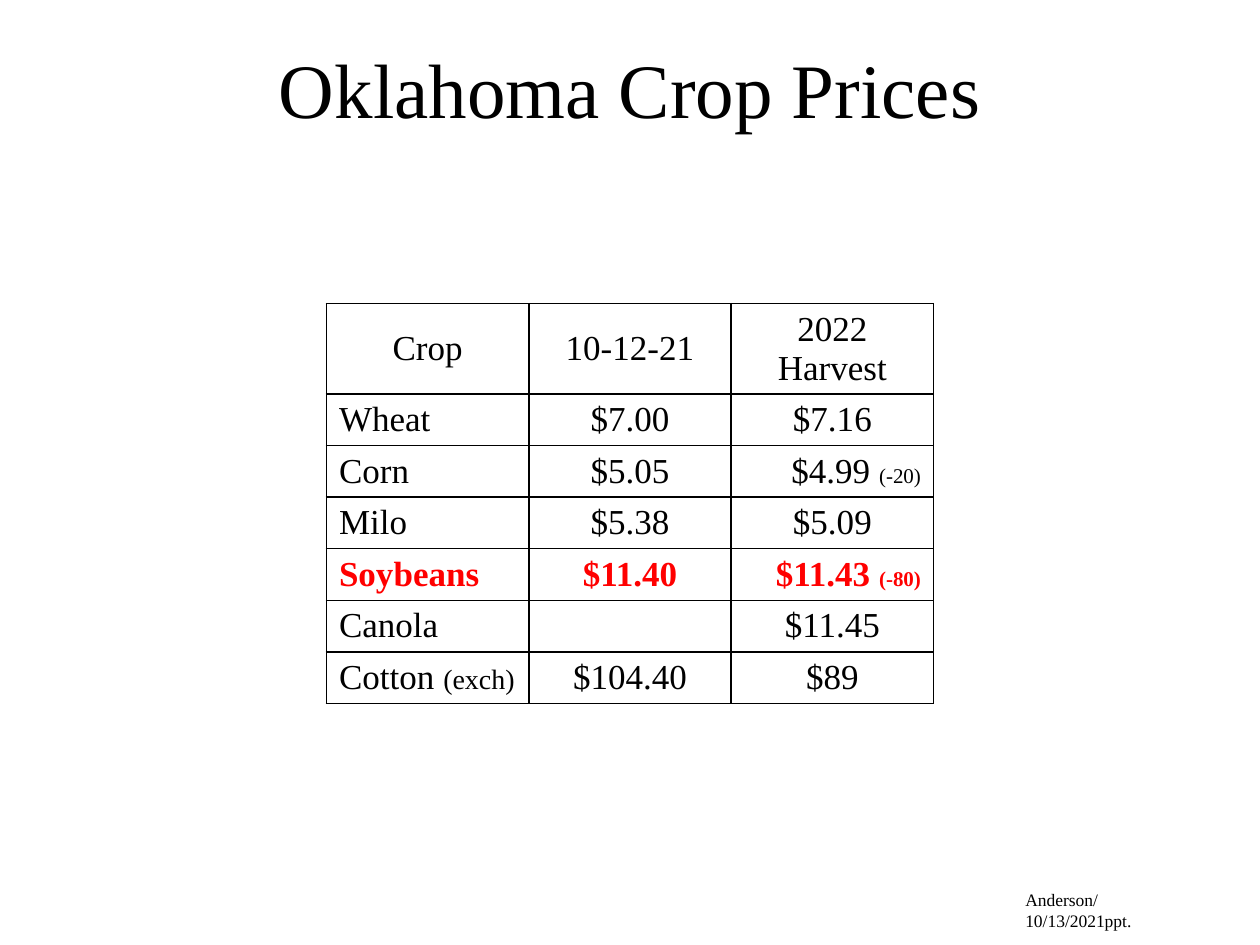
import pptx
import pptx.dml.color
import pptx.enum.text
import pptx.oxml.ns
import pptx.util
from lxml import etree
from pptx.util import Cm

FONT = "Times New Roman"
BLACK = "000000"
RED = "FF0000"
ALIGN = pptx.enum.text.PP_ALIGN
MIDDLE = pptx.enum.text.MSO_ANCHOR.MIDDLE

HEADINGS = ["Crop", "10-12-21", "2022 Harvest"]
PRICES = [
    ["Wheat", "$7.00", "$7.16"],
    ["Corn", "$5.05", ("$4.99 ", "(-20)", 12)],
    ["Milo", "$5.38", "$5.09"],
    ["Soybeans", "$11.40", ("$11.43 ", "(-80)", 12)],
    ["Canola", "", "$11.45"],
    [("Cotton ", "(exch)", 16), "$104.40", "$89"],
]
HIGHLIGHTED_CROP = "Soybeans"


def rgb(color):
    return pptx.dml.color.RGBColor.from_string(color)


def format_run(run, size, color=BLACK, bold=False):
    run.font.name = FONT
    run.font.size = pptx.util.Pt(size)
    run.font.bold = bold
    run.font.color.rgb = rgb(color)


def place(shape, left, top, width, height):
    shape.left, shape.top, shape.width, shape.height = left, top, width, height


def add_title(slide, left, top, width, height):
    title = slide.shapes.title
    place(title, left, top, width, height)
    title.text_frame.text = "Oklahoma Crop Prices"
    title.text_frame.vertical_anchor = MIDDLE
    paragraph = title.text_frame.paragraphs[0]
    paragraph.alignment = ALIGN.CENTER
    format_run(paragraph.runs[0], 44)


def add_credit(slide, left, top, width, height):
    box = slide.shapes.add_textbox(left, top, width, height)
    box.text_frame.word_wrap = True
    box.text_frame.text = "Anderson/10/13/2021ppt."
    format_run(box.text_frame.paragraphs[0].runs[0], 10)


def set_borders(cell, color, width):
    properties = cell._tc.get_or_add_tcPr()
    qn = pptx.oxml.ns.qn
    for position, side in enumerate(("a:lnL", "a:lnR", "a:lnT", "a:lnB")):
        line = etree.Element(qn(side), w=str(pptx.util.Pt(width)))
        fill = etree.SubElement(line, qn("a:solidFill"))
        etree.SubElement(fill, qn("a:srgbClr"), val=color)
        properties.insert(position, line)


def fill_cell(cell, content, alignment, color=BLACK, bold=False):
    cell.fill.background()
    set_borders(cell, BLACK, 1)
    paragraph = cell.text_frame.paragraphs[0]
    paragraph.alignment = alignment
    if isinstance(content, tuple):
        text, note, note_size = content
    else:
        text, note, note_size = content, "", 0
    paragraph.text = text
    for run in paragraph.runs:
        format_run(run, 20, color, bold)
    if note:
        note_run = paragraph.add_run()
        note_run.text = note
        format_run(note_run, note_size, color, bold)


def add_price_table(slide, left, top, width, header_height, row_height):
    height = header_height + row_height * len(PRICES)
    frame = slide.shapes.add_table(
        len(PRICES) + 1, len(HEADINGS), left, top, width, height)
    table = frame.table
    table.first_row = False
    table.horz_banding = False
    for column in table.columns:
        column.width = width // len(HEADINGS)
    for row in table.rows:
        row.height = row_height
    table.rows[0].height = header_height

    for column_index, heading in enumerate(HEADINGS):
        cell = table.cell(0, column_index)
        cell.vertical_anchor = MIDDLE
        fill_cell(cell, heading, ALIGN.CENTER)

    for row_index, prices in enumerate(PRICES, start=1):
        highlighted = prices[0] == HIGHLIGHTED_CROP
        color = RED if highlighted else BLACK
        for column_index, content in enumerate(prices):
            if column_index == 0:
                alignment = ALIGN.LEFT
            elif isinstance(content, tuple):
                alignment = ALIGN.RIGHT
            else:
                alignment = ALIGN.CENTER
            fill_cell(table.cell(row_index, column_index), content,
                      alignment, color, highlighted)


def main():
    presentation = pptx.Presentation()
    presentation.slide_width = Cm(25.4)
    presentation.slide_height = Cm(19.05)
    slide = presentation.slides.add_slide(presentation.slide_layouts[5])
    add_title(slide, Cm(1.27), Cm(0.18), Cm(22.86), Cm(3.18))
    add_price_table(slide, Cm(6.58), Cm(6.12), Cm(12.24), Cm(1.81), Cm(1.04))
    add_credit(slide, Cm(20.42), Cm(17.8), Cm(3.99), Cm(0.69))
    presentation.save("out.pptx")


if __name__ == "__main__":
    main()
